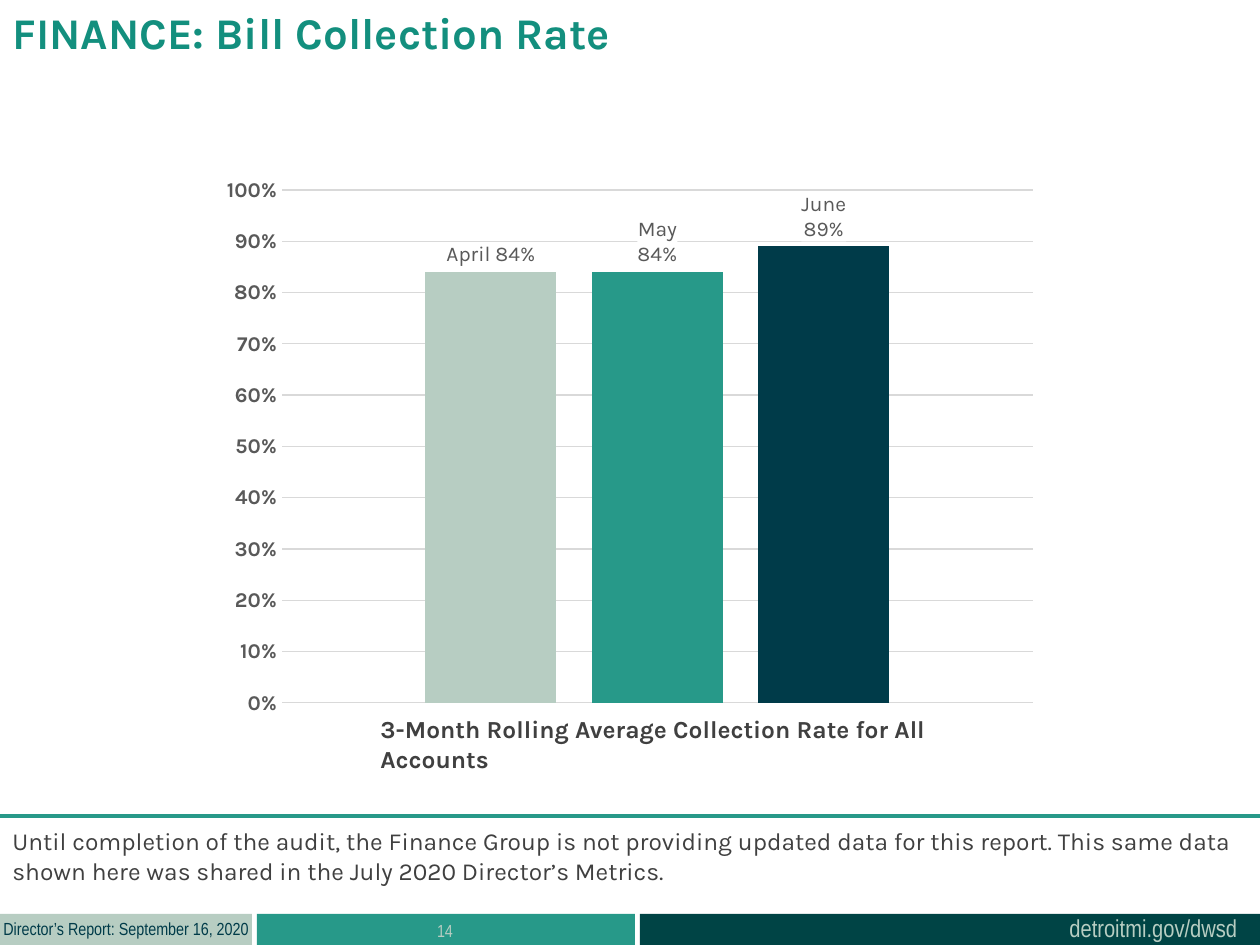
"""Builds the bill collection rate slide."""
from dataclasses import dataclass

from lxml.etree import SubElement
from pptx import Presentation
from pptx.chart.data import CategoryChartData
from pptx.dml.color import RGBColor
from pptx.enum.chart import XL_CHART_TYPE, XL_LABEL_POSITION, XL_TICK_MARK
from pptx.enum.shapes import MSO_CONNECTOR, MSO_SHAPE
from pptx.enum.text import PP_ALIGN
from pptx.oxml import parse_xml
from pptx.oxml.ns import nsdecls, qn
from pptx.util import Emu, Pt


@dataclass(frozen=True)
class Theme:
    """Colours, fonts and type sizes."""
    sage: str = "B7CDC2"
    teal: str = "279989"
    navy: str = "003B49"
    pine: str = "004445"
    heading: str = "138F7E"
    body: str = "404040"
    label: str = "595959"
    grid: str = "D9D9D9"
    white: str = "FFFFFF"
    font: str = "Karla"
    narrow: str = "Arial Narrow"
    chart_font: str = "Calibri"
    title_size: int = 25
    body_size: int = 14
    axis_size: int = 12
    small_size: int = 10


@dataclass(frozen=True)
class Box:
    """A rectangle in px."""
    x: int
    y: int
    w: int
    h: int


@dataclass(frozen=True)
class Bar:
    """A coloured block of the footer."""
    box: Box
    color: str


@dataclass(frozen=True)
class Month:
    """One series of the chart."""
    name: str
    value: float
    label: str
    color: str


THEME = Theme()
SLIDE = Box(0, 0, 1260, 945)
CHART = Box(210, 166, 840, 559)
PLOT = Box(282, 190, 751, 513)
RULE_Y = 816
BARS = [
    Bar(Box(257, 914, 378, 31), THEME.teal),
    Bar(Box(640, 914, 620, 31), THEME.pine),
    Bar(Box(0, 914, 252, 31), THEME.sage),
]
MONTHS = [
    Month("April", 0.84, "April 84%", THEME.sage),
    Month("May", 0.84, "May\n84%", THEME.teal),
    Month("Series 3", 0.89, "June\n89%", THEME.navy),
]


def px(n: int) -> Emu:
    """Turns px into EMU."""
    return Emu(round(n * 914400 / 126))


def place(box: Box) -> tuple:
    """Returns left, top, width and height in EMU."""
    return px(box.x), px(box.y), px(box.w), px(box.h)


def style(font, size: int, color: str, name: str = THEME.font, bold: bool = False) -> None:
    """Sets the look of a font."""
    font.size, font.name, font.bold = Pt(size), name, bold
    font.color.rgb = RGBColor.from_string(color)


def add_text(s, box: Box, text: str, *, wrap: bool = True, align=PP_ALIGN.LEFT, **fmt) -> None:
    """Adds a one-paragraph text box."""
    tf = s.shapes.add_textbox(*place(box)).text_frame
    tf.word_wrap = wrap
    p = tf.paragraphs[0]
    p.alignment = align
    r = p.add_run()
    r.text = text
    style(r.font, **fmt)


def add_bar(s, bar: Bar) -> None:
    """Adds a footer block."""
    sp = s.shapes.add_shape(MSO_SHAPE.RECTANGLE, *place(bar.box))
    sp.shadow.inherit = False
    sp.fill.solid()
    sp.fill.fore_color.rgb = RGBColor.from_string(bar.color)
    sp.line.fill.background()


def add_rule(s, y: int) -> None:
    """Adds a line across the slide."""
    ln = s.shapes.add_connector(MSO_CONNECTOR.STRAIGHT, px(SLIDE.w), px(y), px(0), px(y))
    ln.line.color.rgb = RGBColor.from_string(THEME.teal)
    ln.line.width = Pt(2.25)
    SubElement(ln._element.spPr, qn("a:effectLst"))


def set_plot_area(chart) -> None:
    """Fixes the inner plot area."""
    area = chart._chartSpace.find(".//" + qn("c:plotArea"))
    for old in area.findall(qn("c:layout")):
        area.remove(old)
    layout = parse_xml(f"<c:layout {nsdecls('c')}><c:manualLayout/></c:layout>")
    values = {
        "layoutTarget": "inner", "xMode": "edge", "yMode": "edge",
        "x": round((PLOT.x - CHART.x) / CHART.w, 4),
        "y": round((PLOT.y - CHART.y) / CHART.h, 4),
        "w": round(PLOT.w / CHART.w, 4),
        "h": round(PLOT.h / CHART.h, 4),
    }
    for tag, value in values.items():
        SubElement(layout[0], qn("c:" + tag)).set("val", str(value))
    area.insert(0, layout)


def style_series(series, month: Month) -> None:
    """Colours a series and labels its column."""
    series.format.fill.solid()
    series.format.fill.fore_color.rgb = RGBColor.from_string(month.color)
    label = series.points[0].data_label
    tf = label.text_frame
    tf.text = month.label
    for p in tf.paragraphs:
        style(p.runs[0].font, THEME.axis_size, THEME.label)
    label.position = XL_LABEL_POSITION.OUTSIDE_END
    rich = series._element.find(".//" + qn("c:dLbl") + "/" + qn("c:tx"))
    rich.addnext(parse_xml(
        f"<c:spPr {nsdecls('c', 'a')}><a:solidFill><a:srgbClr val='{THEME.white}'/>"
        "</a:solidFill><a:ln><a:noFill/></a:ln></c:spPr>"))


def add_rate_chart(s, months: list[Month]) -> None:
    """Adds the collection rate column chart."""
    data = CategoryChartData(number_format="0%")
    data.categories = ["3-Month Rolling Average All Accounts"]
    for month in months:
        data.add_series(month.name, [month.value])
    chart = s.shapes.add_chart(XL_CHART_TYPE.COLUMN_CLUSTERED, *place(CHART), data).chart
    chart.has_legend = chart.has_title = False
    style(chart.font, THEME.small_size, "000000", THEME.chart_font)
    plot = chart.plots[0]
    plot.gap_width, plot.overlap, plot.vary_by_categories = 219, -27, False
    for series, month in zip(plot.series, months):
        style_series(series, month)
    chart.category_axis.visible = False
    axis = chart.value_axis
    axis.minimum_scale, axis.maximum_scale, axis.major_unit = 0, 1, 0.1
    axis.major_tick_mark = axis.minor_tick_mark = XL_TICK_MARK.NONE
    axis.tick_labels.number_format = "0%"
    axis.tick_labels.number_format_is_linked = False
    style(axis.tick_labels.font, THEME.axis_size, THEME.label, bold=True)
    axis.format.line.fill.background()
    grid = axis.major_gridlines.format.line
    grid.color.rgb = RGBColor.from_string(THEME.grid)
    grid.width = Pt(0.75)
    set_plot_area(chart)


def main() -> None:
    """Builds and saves the slide."""
    prs = Presentation()
    prs.slide_width, prs.slide_height = px(SLIDE.w), px(SLIDE.h)
    s = prs.slides.add_slide(prs.slide_layouts[6])
    for bar in BARS:
        add_bar(s, bar)
    add_text(s, Box(1057, 907, 195, 43), "detroitmi.gov/dwsd", wrap=False,
             size=THEME.body_size, color=THEME.sage, name=THEME.narrow)
    add_text(s, Box(-9, 912, 272, 34), "Director’s Report: September 16, 2020", wrap=False,
             size=THEME.small_size, color=THEME.navy, name=THEME.narrow)
    add_text(s, Box(256, 914, 378, 50), "14", align=PP_ALIGN.CENTER,
             size=THEME.small_size, color=THEME.sage, name=THEME.narrow)
    add_text(s, Box(0, 0, 956, 97), "FINANCE: Bill Collection Rate",
             size=THEME.title_size, color=THEME.heading, bold=True)
    add_rate_chart(s, MONTHS)
    add_rule(s, RULE_Y)
    add_text(s, Box(368, 708, 608, 43), "3-Month Rolling Average Collection Rate for All Accounts",
             size=THEME.body_size, color=THEME.body, bold=True)
    add_text(s, Box(0, 820, 1260, 72),
             "Until completion of the audit, the Finance Group is not providing updated data for "
             "this report. This same data shown here was shared in the July 2020 Director’s Metrics.",
             size=THEME.body_size, color=THEME.body)
    prs.save("out.pptx")


if __name__ == "__main__":
    main()
